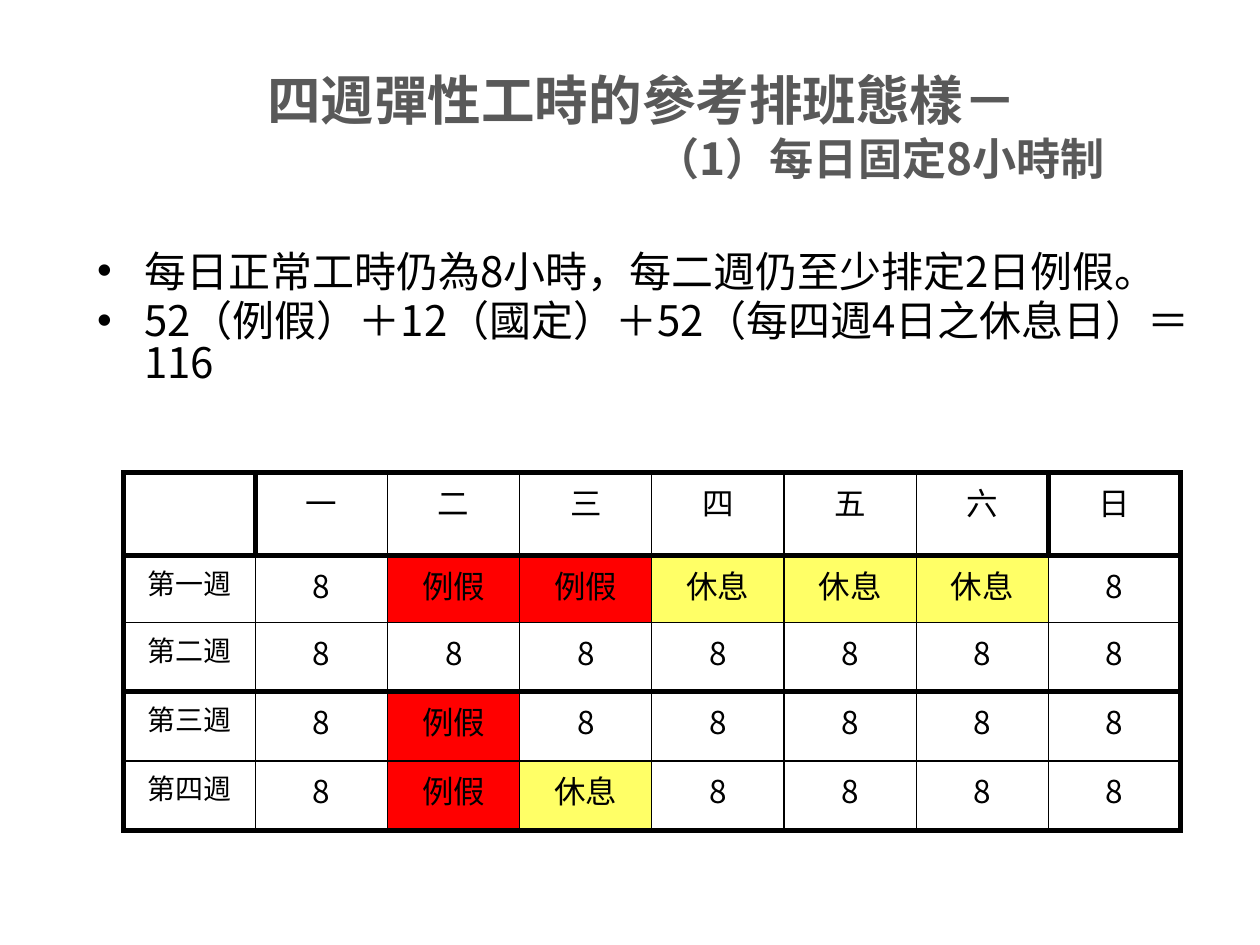
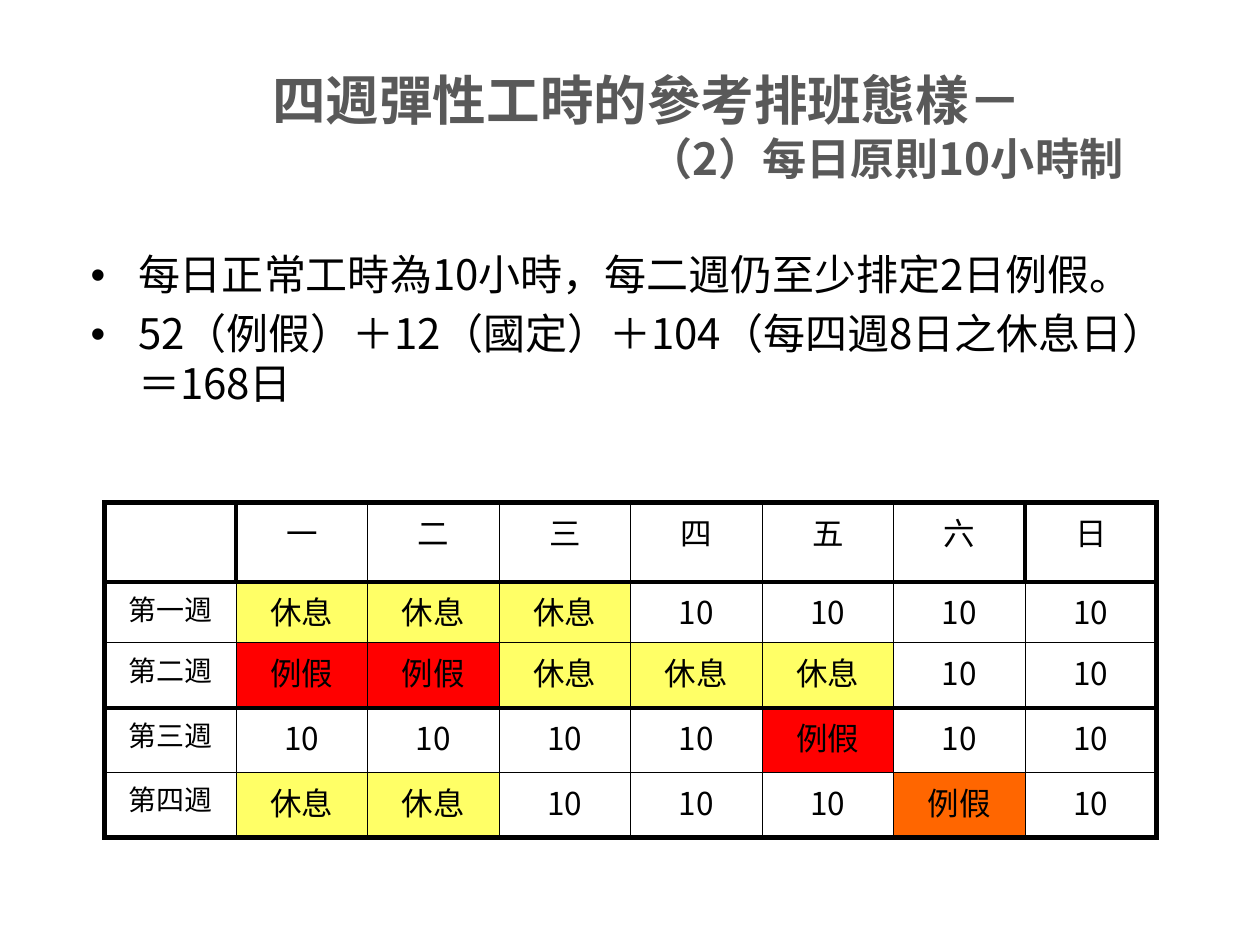
from lxml import etree
from pptx import Presentation
from pptx import util as u
from pptx.dml.color import RGBColor
from pptx.enum import text
from pptx.oxml.ns import qn

FONT = "Noto Sans CJK SC"
COLORS = {"title": "595959", "ink": "000000", "paper": "FFFFFF",
          "holiday": "FF0000", "rest": "FFFF66", "moved": "FF6600"}
DAY_FILLS = {"例假": "holiday", "休息": "rest"}
WEEKDAYS = ["", "一", "二", "三", "四", "五", "六", "日"]
WEEKS = ["第一週", "第二週", "第三週", "第四週"]
THICK, THIN = 3, 0.75
TITLE_BOX = (0.63, 0.33, 8.75, 1.33)


def rgb(name):
    return RGBColor.from_string(COLORS[name])


def format_runs(para, size, color="ink", bold=False):
    for span in para.runs:
        span.font.size = u.Pt(size)
        span.font.bold = bold
        span.font.color.rgb = rgb(color)
        span.font.name = FONT
        latin = span.font._element.find(qn("a:latin"))
        east_asian = etree.Element(qn("a:ea"), typeface=FONT)
        latin.addnext(east_asian)


def place(box, area):
    box.left, box.top, box.width, box.height = map(u.Inches, area)
    box.text_frame.auto_size = text.MSO_AUTO_SIZE.NONE


def fill_title(page, subtitle, indents):
    box = page.shapes.title
    place(box, TITLE_BOX)
    frame = box.text_frame
    frame.vertical_anchor = text.MSO_ANCHOR.MIDDLE
    frame.text = "四週彈性工時的參考排班態樣－\n" + subtitle
    for para, indent, size in zip(frame.paragraphs, indents, (30.6, 25.2)):
        para._p.get_or_add_pPr().set("marL", str(u.Inches(indent)))
        para.alignment = text.PP_ALIGN.CENTER
        para.space_before = u.Pt(0)
        format_runs(para, size, "title", bold=True)


def fill_body(page, area, items, line_spacing, gap):
    box = page.placeholders[1]
    place(box, area)
    box.text_frame.text = "\n".join(items)
    for index, para in enumerate(box.text_frame.paragraphs):
        para.line_spacing = line_spacing
        para.space_before = u.Pt(gap if index else 0)
        format_runs(para, 24)


def set_borders(cell, row, column):
    header = row == 0
    thick_sides = {
        "lnL": column == 0 or header and column in (1, 7),
        "lnR": column == 7 or header and column in (0, 6),
        "lnT": row in (0, 1, 3),
        "lnB": row in (0, 2, 4),
    }
    properties = cell._tc.get_or_add_tcPr()
    for index, (side, thick) in enumerate(thick_sides.items()):
        width = u.Pt(THICK if thick else THIN)
        line = etree.Element(qn(f"a:{side}"), w=str(width))
        solid = etree.SubElement(line, qn("a:solidFill"))
        etree.SubElement(solid, qn("a:srgbClr"), val=COLORS["ink"])
        properties.insert(index, line)


def add_schedule(page, area, row_heights, shifts, special_fills=None):
    special_fills = special_fills or {}
    rows = [WEEKDAYS] + [[week] + days.split() for week, days in zip(WEEKS, shifts)]
    frame = page.shapes.add_table(len(rows), len(WEEKDAYS), *map(u.Inches, area))
    table = frame.table
    table.first_row = table.horz_banding = False
    for column in table.columns:
        column.width = u.Inches(area[2] / len(WEEKDAYS))
    for row_index, (labels, height) in enumerate(zip(rows, row_heights)):
        table.rows[row_index].height = u.Inches(height)
        for column_index, label in enumerate(labels):
            cell = table.cell(row_index, column_index)
            cell.text = label
            para = cell.text_frame.paragraphs[0]
            para.alignment = text.PP_ALIGN.CENTER
            format_runs(para, 16 if label in WEEKS else 18)
            fill = special_fills.get((row_index, column_index), DAY_FILLS.get(label, "paper"))
            cell.fill.solid()
            cell.fill.fore_color.rgb = rgb(fill)
            set_borders(cell, row_index, column_index)


def add_page(deck):
    return deck.slides.add_slide(deck.slide_layouts[1])


def main():
    deck = Presentation()
    deck.slide_width, deck.slide_height = u.Inches(10), u.Inches(7.5)

    page = add_page(deck)
    fill_title(page, "（1）每日固定8小時制", (0.18, 3.96))
    fill_body(page, (0.67, 1.96, 8.95, 1.44),
              ["每日正常工時仍為8小時，每二週仍至少排定2日例假。",
               "52（例假）＋12（國定）＋52（每四週4日之休息日）＝116"], 0.84, 4)
    add_schedule(page, (0.98, 3.75, 8.39, 2.84), (0.66, 0.53, 0.55, 0.55, 0.55),
                 ["8 例假 例假 休息 休息 休息 8",
                  "8 8 8 8 8 8 8",
                  "8 例假 8 8 8 8 8",
                  "8 例假 休息 8 8 8 8"])

    page = add_page(deck)
    fill_title(page, "（2）每日原則10小時制", (0.26, 4.05))
    fill_body(page, (0.62, 1.94, 8.79, 1.68),
              ["每日正常工時為10小時，每二週仍至少排定2日例假。",
               "52（例假）＋12（國定）＋104（每四週8日之休息日）＝168日"], 0.99, 5)
    add_schedule(page, (0.83, 3.99, 8.35, 2.66), (0.63, 0.48, 0.52, 0.51, 0.52),
                 ["休息 休息 休息 10 10 10 10",
                  "例假 例假 休息 休息 休息 10 10",
                  "10 10 10 10 例假 10 10",
                  "休息 休息 10 10 10 例假 10"],
                 {(4, 6): "moved"})

    deck.save("out.pptx")


if __name__ == "__main__":
    main()
